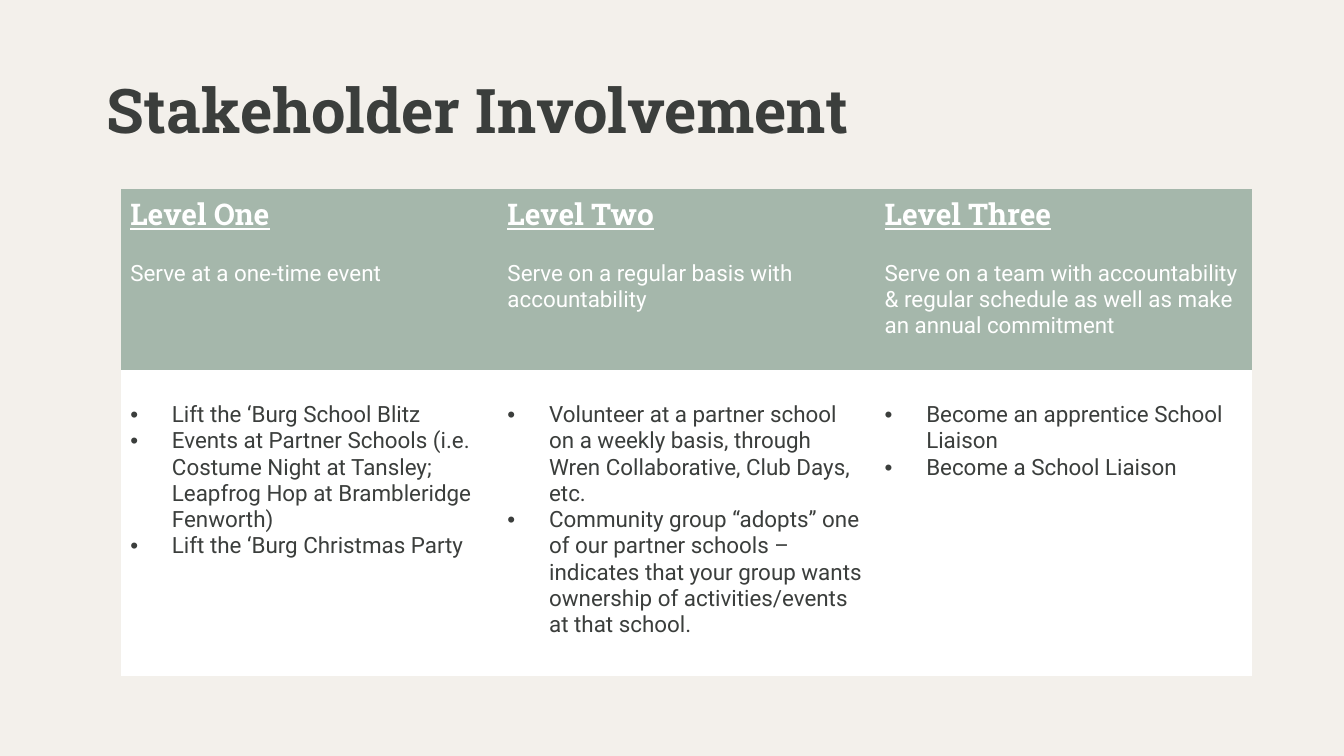
from lxml.etree import SubElement
from pptx import Presentation
from pptx.dml.color import RGBColor
from pptx.enum.text import MSO_ANCHOR, MSO_AUTO_SIZE, PP_ALIGN
from pptx.oxml.ns import qn
from pptx.util import Inches, Pt

CREAM = RGBColor(0xF3, 0xF0, 0xEB)
SAGE = RGBColor(0xA5, 0xB7, 0xAB)
WHITE = RGBColor(0xFF, 0xFF, 0xFF)
INK = RGBColor(0x3B, 0x3E, 0x3C)
SLAB, SANS = "Roboto Slab", "Roboto"
PLAIN = "{2D5ABB26-0587-4C30-8999-92F81FD0307C}"  # no style, no grid

LEVELS = [
    ("Level One", "Serve at a one-time event", [
        "Lift the ‘Burg School Blitz",
        "Events at Partner Schools (i.e. Costume Night at Tansley; "
        "Leapfrog Hop at Brambleridge Fenworth)",
        "Lift the ‘Burg Christmas Party",
    ]),
    ("Level Two", "Serve on a regular basis with accountability", [
        "Volunteer at a partner school on a weekly basis, through "
        "Wren Collaborative, Club Days, etc.",
        "Community group “adopts” one of our partner schools – indicates "
        "that your group wants ownership of activities/events at that school.",
    ]),
    ("Level Three", "Serve on a team with accountability & regular schedule "
     "as well as make an annual commitment", [
         "Become an apprentice School Liaison",
         "Become a School Liaison",
     ]),
]


def style(para, face, size, color, bold=False, line=False):
    para.alignment = PP_ALIGN.LEFT
    for run in para.runs:
        font = run.font
        font.name, font.size = face, Pt(size)
        font.bold, font.underline = bold, line
        font.color.rgb = color


def bullet(para):
    props = para._p.get_or_add_pPr()
    props.set("marL", str(Inches(0.31)))
    props.set("indent", str(-Inches(0.31)))
    SubElement(props, qn("a:buFont"), typeface="Arial")
    SubElement(props, qn("a:buChar"), char="•")


deck = Presentation()
deck.slide_width = wide = Inches(10)
deck.slide_height = wide * 9 // 16
slide = deck.slides.add_slide(deck.slide_layouts[5])
slide.background.fill.solid()
slide.background.fill.fore_color.rgb = CREAM

# Title
title = slide.shapes.title
title.left, title.top = Inches(0.69), Inches(0.3)
title.width, title.height = wide - 2 * title.left, Inches(1.09)
frame = title.text_frame
frame.text = "Stakeholder Involvement"
frame.vertical_anchor = MSO_ANCHOR.MIDDLE
frame.auto_size = MSO_AUTO_SIZE.NONE
frame.paragraphs[0].line_spacing = 0.9
style(frame.paragraphs[0], SLAB, 33, INK, bold=True)

# Table: one column per level, a header row and a list row
rows = [Inches(1.34), Inches(2.28)]
holder = slide.shapes.add_table(len(rows), len(LEVELS), Inches(0.9),
                                Inches(1.41), Inches(8.42), sum(rows))
table = holder.table
table._tbl.tblPr.find(qn("a:tableStyleId")).text = PLAIN
table.horz_banding = False
for row, height in zip(table.rows, rows):
    row.height = height

for col, (name, duty, tasks) in enumerate(LEVELS):
    head, body = table.cell(0, col), table.cell(1, col)
    for cell, fill, top in ((head, SAGE, 0.04), (body, WHITE, 0.24)):
        cell.fill.solid()
        cell.fill.fore_color.rgb = fill
        cell.margin_left = cell.margin_right = Inches(0.07)
        cell.margin_top, cell.margin_bottom = Inches(top), Inches(0.04)

    head.text_frame.text = f"{name}\n{duty}"
    label, note = head.text_frame.paragraphs
    style(label, SLAB, 16, WHITE, bold=True, line=True)
    style(note, SANS, 12, WHITE)
    note.space_before = Pt(14)

    body.text_frame.text = "\n".join(tasks)
    for para in body.text_frame.paragraphs:
        style(para, SANS, 12, INK)
        bullet(para)

deck.save("out.pptx")
